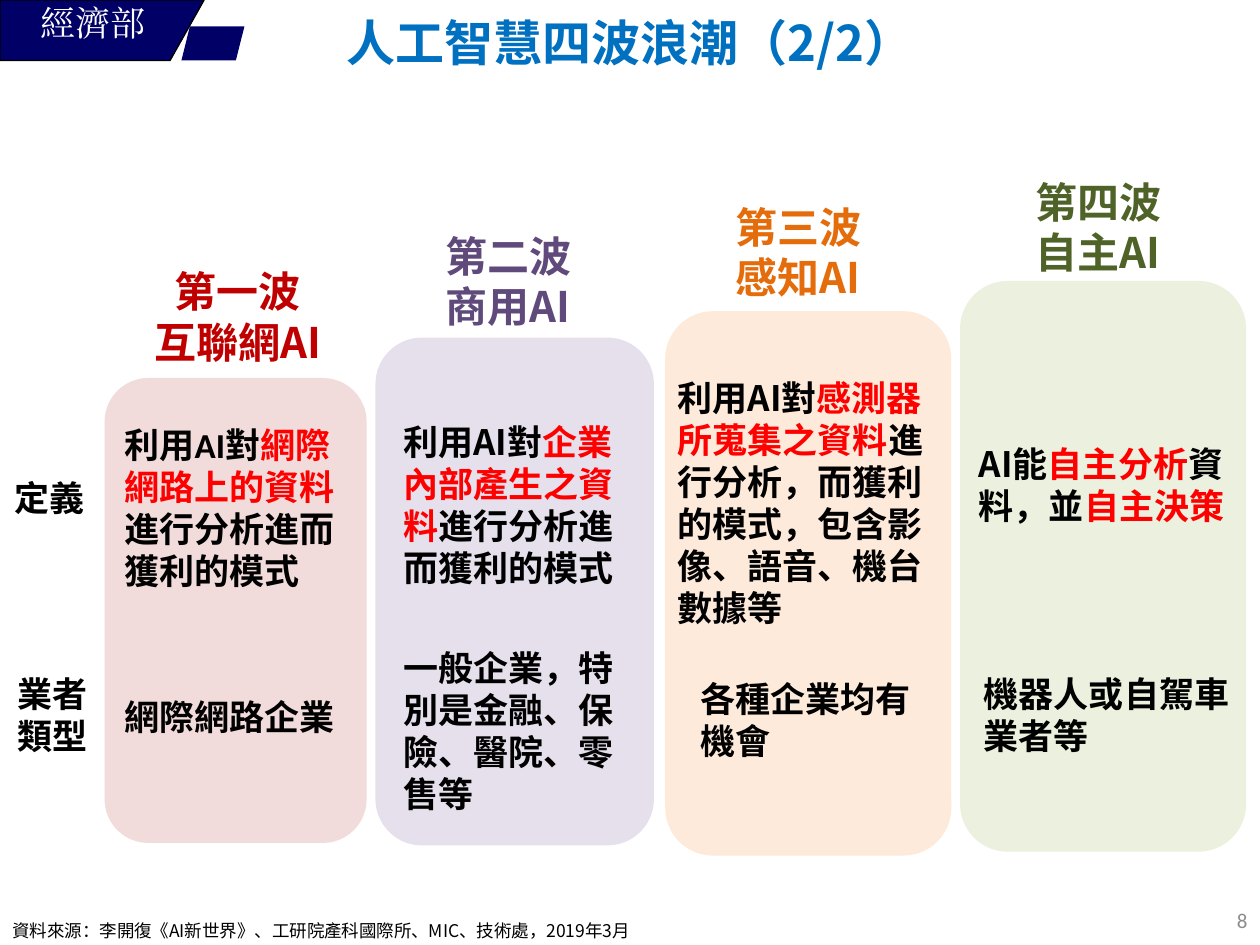
from dataclasses import dataclass

from lxml import etree
from pptx import Presentation
from pptx import util as u
from pptx.dml.color import RGBColor
from pptx.enum import shapes, text
from pptx.oxml import ns


@dataclass(frozen=True)
class Theme:
    """Colours, fonts and type sizes of the slide."""
    navy: str = "000066"
    blue: str = "0070C0"
    black: str = "000000"
    white: str = "FFFFFF"
    red: str = "FF0000"
    grey: str = "8C8C8C"
    sans: str = "Noto Sans CJK SC"
    title_font: str = "Noto Sans CJK JP"
    latin: str = "Calibri"
    serif: str = "Times New Roman"
    title: int = 28
    head: int = 24
    body: int = 20
    page: int = 12
    note: int = 10


T = Theme()
MID = text.MSO_ANCHOR.MIDDLE
CENTER, RIGHT = text.PP_ALIGN.CENTER, text.PP_ALIGN.RIGHT

WAVES = [
    dict(box=(0.83, 3, 2.08, 3.69), fill="F2DCDB", ink="C00000", font=T.latin,
         head=((0.15, -0.94, 1.81, 0.91), "第一波\v互聯網AI", CENTER),
         scope=((0.06, 0.31, 1.9, 1.44), "利用AI對|網際網路上的資料|進行分析進而獲利的模式"),
         firms=((0.06, 2.47, 1.9, 0.44), "網際網路企業")),
    dict(box=(2.98, 2.68, 2.21, 4.03), fill="E6E0EC", ink="604A7B", font=T.sans,
         head=((0.46, -0.9, 1.33, 0.91), "第二波\v商用AI", None),
         scope=((0.12, 0.61, 2.11, 1.44), "利用AI對|企業內部產生之資料|進行分析進而獲利的模式"),
         firms=((0.12, 2.4, 2.11, 1.44), "一般企業，特別是金融、保險、醫院、零售等")),
    dict(box=(5.28, 2.47, 2.27, 4.32), fill="FDEADA", ink="E46C0A", font=T.sans,
         head=((0.46, -0.92, 1.33, 0.91), "第三波\v感知AI", None),
         scope=((0, 0.47, 2.31, 2.12),
                "利用AI對|感測器所蒐集之資料|進行分析，而獲利的模式，包含影像、語音、機台數據等"),
         firms=((0.18, 2.86, 1.99, 0.77), "各種企業均有機會")),
    dict(box=(7.62, 2.23, 2.27, 4.53), fill="EBF1DE", ink="4F6228", font=T.sans,
         head=((0.5, -0.88, 1.33, 0.91), "第四波\v自主AI", None),
         scope=((0.05, 1.23, 2.19, 1.1), "AI能|自主分析|資料，並|自主決策"),
         firms=((0.09, 3.06, 2.15, 0.77), "機器人或自駕車業者等")),
]


def rgb(code):
    """Turn a hex code into a colour."""
    return RGBColor.from_string(code)


def within(box, part):
    """Move a part given relative to a box onto the slide."""
    return (box[0] + part[0], box[1] + part[1], part[2], part[3])


def style(para, size, ink, font, bold):
    """Set the font of a paragraph for Latin and East Asian text."""
    face = para.font
    face.size, face.bold, face.name = u.Pt(size), bold, font
    face.color.rgb = rgb(ink)
    props = para._p.get_or_add_pPr().find(ns.qn("a:defRPr"))
    etree.SubElement(props, ns.qn("a:ea")).set("typeface", font)


def write(slide, box, words, size=T.body, ink=T.black, font=T.sans,
          bold=True, align=None, anchor=None, wrap=True):
    """Add a text box where every second part between bars is red."""
    frame = slide.shapes.add_textbox(*map(u.Inches, box)).text_frame
    frame.word_wrap = wrap
    frame.vertical_anchor = anchor
    for row, line in enumerate(words.split("\n")):
        para = frame.add_paragraph() if row else frame.paragraphs[0]
        para.alignment = align
        if "|" in line:
            for spot, part in enumerate(line.split("|")):
                run = para.add_run()
                run.text = part
                if spot % 2:
                    run.font.color.rgb = rgb(T.red)
        else:
            para.text = line
        style(para, size, ink, font, bold)


def paint(shape, fill):
    """Give a shape a flat fill without line or shadow."""
    shape.shadow.inherit = False
    shape.fill.solid()
    shape.fill.fore_color.rgb = rgb(fill)
    shape.line.fill.background()


def banner(slide, box):
    """Draw the slanted name plate with a plain mark beside it."""
    x, y, w, h = box
    edge = [(x, y), (x, y + h), (x + w - 0.27, y + h), (x + w, y)]
    points = [(u.Inches(a), u.Inches(b)) for a, b in edge]
    form = slide.shapes.build_freeform(*points[0])
    form.add_line_segments(points[1:], close=True)
    plate = form.convert_to_shape()
    paint(plate, T.navy)
    plate.line.color.rgb = rgb(T.black)
    plate.line.width = u.Pt(0.75)
    mark = within(box, (1.44, 0.21, 0.5, 0.27))
    paint(slide.shapes.add_shape(shapes.MSO_SHAPE.PARALLELOGRAM,
                                 *map(u.Inches, mark)), T.navy)
    write(slide, within(box, (0.04, 0.01, 1.4, 0.34)), "經濟部", ink=T.white,
          font=T.serif, bold=False, align=CENTER, anchor=MID)


def column(slide, box, fill, ink, font, head, scope, firms):
    """Draw one wave: its panel, heading, definition and firm types."""
    panel = slide.shapes.add_shape(shapes.MSO_SHAPE.ROUNDED_RECTANGLE,
                                   *map(u.Inches, box))
    paint(panel, fill)
    spot, words, align = head
    write(slide, within(box, spot), words, T.head, ink, align=align)
    for spot, words in (scope, firms):
        write(slide, within(box, spot), words, font=font)


def labels(slide, box):
    """Name the two rows at the left of the columns."""
    write(slide, within(box, (0, 0, 0.76, 0.44)), "定義", wrap=False)
    write(slide, within(box, (0.02, 1.56, 0.76, 0.77)), "業者\n類型", wrap=False)


def footer(slide, box):
    """Place the source note and the page number."""
    write(slide, within(box, (0, 0.15, 6.62, 0.25)),
          "資料來源：李開復《AI新世界》、工研院產科國際所、MIC、技術處，2019年3月",
          T.note, bold=False)
    write(slide, within(box, (7.67, 0, 2.33, 0.4)), "8", T.page, T.grey,
          T.latin, False, RIGHT, MID)


def main():
    """Build the slide and save it."""
    deck = Presentation()
    deck.slide_width, deck.slide_height = u.Inches(10), u.Inches(7.5)
    slide = deck.slides.add_slide(deck.slide_layouts[6])
    banner(slide, (0, 0, 1.62, 0.48))
    write(slide, (0, 0, 10, 0.67), "人工智慧四波浪潮（2/2）", T.title, T.blue,
          T.title_font, align=CENTER, anchor=MID)
    for wave in WAVES:
        column(slide, **wave)
    labels(slide, (0.02, 3.73, 0.78, 2.33))
    footer(slide, (0, 7.1, 10, 0.4))
    deck.save("out.pptx")


if __name__ == "__main__":
    main()
